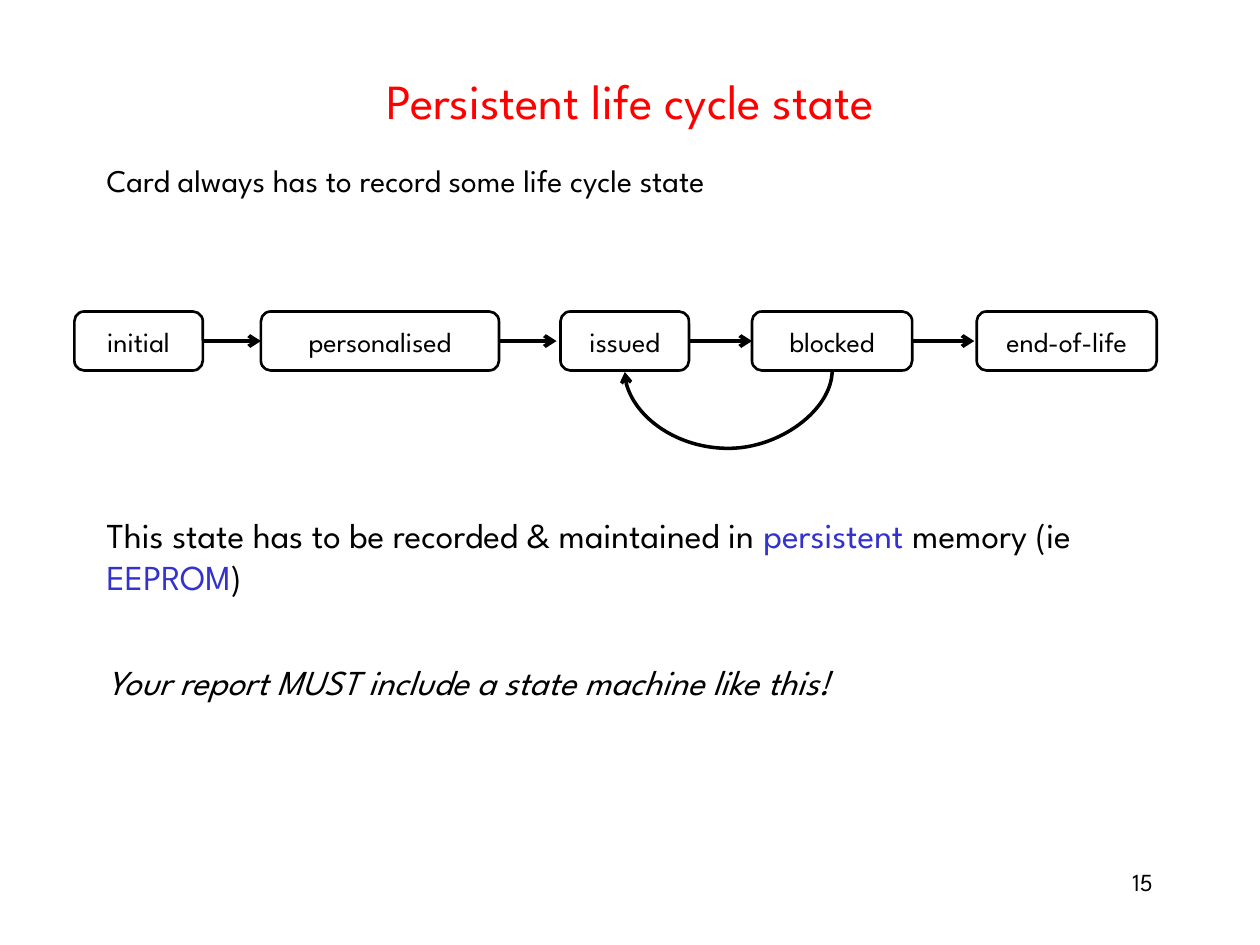
from itertools import pairwise

from lxml import etree
from pptx import Presentation
from pptx.dml.color import RGBColor
from pptx.enum.shapes import MSO_CONNECTOR, MSO_SHAPE
from pptx.enum.text import MSO_ANCHOR, PP_ALIGN
from pptx.oxml.ns import qn
from pptx.util import Cm, Pt

ROUNDED = MSO_SHAPE.ROUNDED_RECTANGLE
STRAIGHT, CURVED = MSO_CONNECTOR.STRAIGHT, MSO_CONNECTOR.CURVE
LEFT, CENTER, RIGHT = PP_ALIGN.LEFT, PP_ALIGN.CENTER, PP_ALIGN.RIGHT
TOP, MIDDLE = MSO_ANCHOR.TOP, MSO_ANCHOR.MIDDLE

BLACK = RGBColor(0x00, 0x00, 0x00)
RED = RGBColor(0xFF, 0x00, 0x00)
BLUE = RGBColor(0x33, 0x33, 0xCC)
FONT = "League Spartan"

STATE_TOP, STATE_HEIGHT = 6.28, 1.19
BOTTOM_SITE = 2

# name, left, width, gap between incoming arrowhead and box (cm)
STATES = [
    ("initial", 1.5, 2.59, 0),
    ("personalised", 5.26, 4.8, 0),
    ("issued", 11.3, 2.59, 0.08),
    ("blocked", 15.16, 3.23, 0),
    ("end-of-life", 19.69, 3.63, 0.05),
]


def style_run(run, size, color=BLACK, italic=False):
    run.font.name = FONT
    run.font.size = Pt(size)
    run.font.color.rgb = color
    run.font.italic = italic


def add_text(slide, left, top, width, height, paragraphs, align=LEFT, anchor=TOP):
    """Each paragraph is (space before, size, italic, [(text, color), ...])."""
    frame = slide.shapes.add_textbox(Cm(left), Cm(top), Cm(width), Cm(height)).text_frame
    frame.word_wrap = True
    frame.vertical_anchor = anchor
    for index, (space, size, italic, pieces) in enumerate(paragraphs):
        paragraph = frame.add_paragraph() if index else frame.paragraphs[0]
        paragraph.alignment = align
        paragraph.space_before = Pt(space)
        for text, color in pieces:
            run = paragraph.add_run()
            run.text = text
            style_run(run, size, color, italic)


def add_state(slide, name, left, width):
    state = slide.shapes.add_shape(
        ROUNDED, Cm(left), Cm(STATE_TOP), Cm(width), Cm(STATE_HEIGHT))
    state.shadow.inherit = False
    state.fill.background()
    state.line.color.rgb = BLACK
    state.line.width = Pt(1.5)
    frame = state.text_frame
    frame.text = name
    frame.word_wrap = False
    frame.vertical_anchor = MIDDLE
    frame.paragraphs[0].alignment = CENTER
    style_run(frame.paragraphs[0].runs[0], 16)
    return state


def add_arrow(slide, kind, x1, y1, x2, y2, width):
    arrow = slide.shapes.add_connector(kind, Cm(x1), Cm(y1), Cm(x2), Cm(y2))
    arrow.line.color.rgb = BLACK
    arrow.line.width = Pt(width)
    etree.SubElement(arrow.line._get_or_add_ln(), qn("a:tailEnd"), type="arrow")
    etree.SubElement(arrow._element.spPr, qn("a:effectLst"))
    return arrow


def add_return_arrow(slide, source, target):
    """Curve leaving the bottom of source and entering the bottom of target."""
    arrow = add_arrow(slide, CURVED, 0, 0, 1, 1, 2)
    arrow.begin_connect(source, BOTTOM_SITE)
    arrow.end_connect(target, BOTTOM_SITE)

    # A quarter turn makes the thin, tall frame lie flat below the states
    start_x = source.left + source.width // 2
    end_x = target.left + target.width // 2
    thickness, depth = Cm(0.03), Cm(1.57)
    span = start_x - end_x
    properties = arrow._element.spPr
    frame = properties.find(qn("a:xfrm"))
    for flip in ("flipH", "flipV"):
        frame.attrib.pop(flip, None)
    frame.set("rot", "5400000")
    arrow.width, arrow.height = thickness, span
    arrow.left = (start_x + end_x - thickness) // 2
    arrow.top = source.top + source.height + (thickness - span) // 2
    guides = properties.find(qn("a:prstGeom")).get_or_add_avLst()
    bend = round(depth / thickness * 100000)
    etree.SubElement(guides, qn("a:gd"), name="adj1", fmla=f"val {bend}")


def add_state_machine(slide):
    boxes = {name: add_state(slide, name, left, width)
             for name, left, width, _ in STATES}
    middle = STATE_TOP + STATE_HEIGHT / 2
    for (_, left, width, _), (_, next_left, _, gap) in pairwise(STATES):
        add_arrow(slide, STRAIGHT, left + width, middle, next_left - gap, middle, 2.25)
    add_return_arrow(slide, boxes["blocked"], boxes["issued"])


def main():
    presentation = Presentation()
    presentation.slide_width, presentation.slide_height = Cm(25.4), Cm(19.05)
    slide = presentation.slides.add_slide(presentation.slide_layouts[6])

    # Title
    add_text(slide, 1.9, 0.91, 21.6, 2.21,
             [(0, 28, False, [("Persistent life cycle state", RED)])], CENTER, MIDDLE)

    # Body, with room for the diagram after the first line
    add_text(slide, 1.9, 3.12, 21.6, 13.03, [
        (6, 18, False, [("Card always has to record some life cycle state", BLACK)]),
        (180, 20, False, [
            ("This state has to be recorded & maintained in ", BLACK),
            ("persistent", BLUE),
            (" memory (ie ", BLACK),
            ("EEPROM", BLUE),
            (")", BLACK),
        ]),
        (36, 20, True, [("Your report MUST include a state machine like this!", BLACK)]),
    ])

    # Slide number
    add_text(slide, 18.21, 17.35, 5.28, 1.27, [(0, 14, False, [("15", BLACK)])], RIGHT)

    # Life cycle diagram
    add_state_machine(slide)

    presentation.save("out.pptx")


if __name__ == "__main__":
    main()
